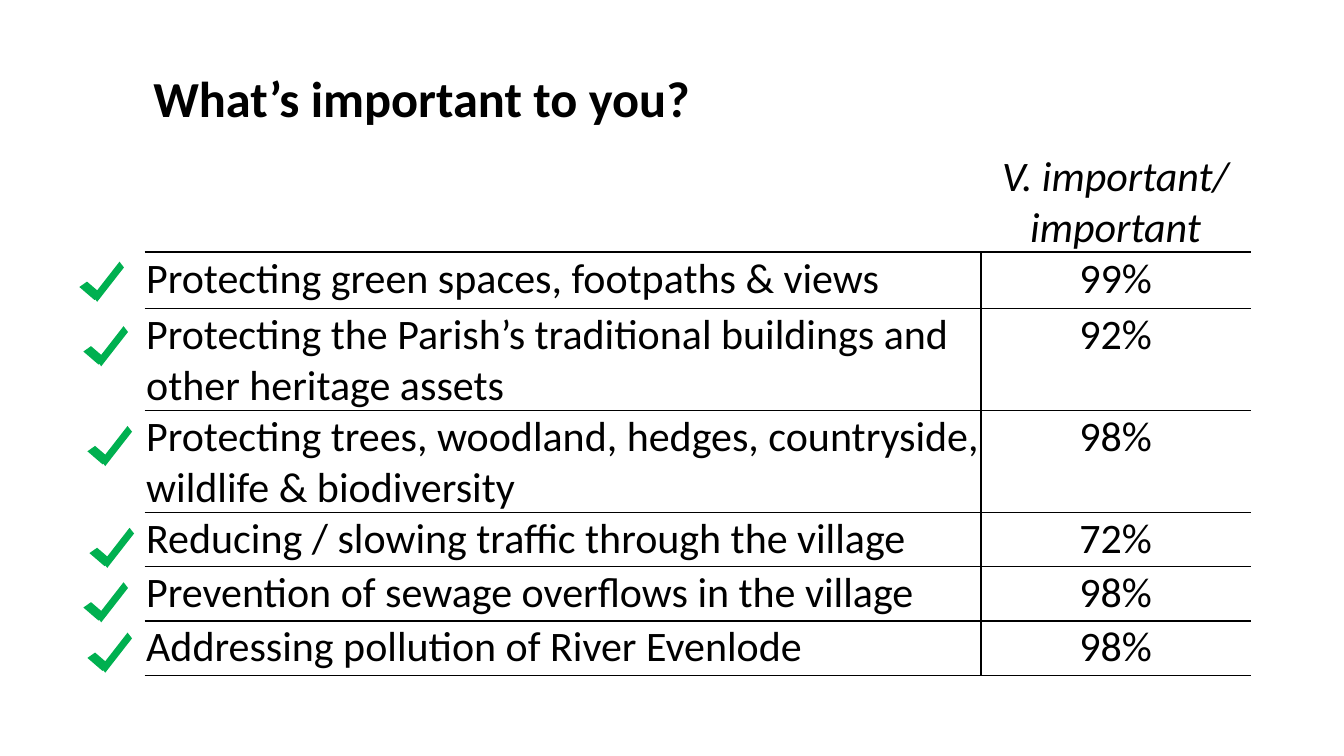
from dataclasses import dataclass

from lxml import etree
from pptx import Presentation
from pptx import util as u
from pptx.dml.color import RGBColor
from pptx.enum import shapes, text
from pptx.oxml import ns

PX = u.Inches(1) // 100


@dataclass(frozen=True)
class Theme:
    font: str = "Calibri"
    ink: str = "000000"
    tick: str = "00B050"
    title_size: int = 36
    body_size: int = 30
    rule_width: int = 1


THEME = Theme()
TITLE = "What’s important to you?"
HEADER = ("", "V. important/ important")
PRIORITIES = [
    ("Protecting green spaces, footpaths & views", "99%"),
    ("Protecting the Parish’s traditional buildings and other heritage assets", "92%"),
    ("Protecting trees, woodland, hedges, countryside, wildlife & biodiversity", "98%"),
    ("Reducing / slowing traffic through the village", "72%"),
    ("Prevention of sewage overflows in the village", "98%"),
    ("Addressing pollution of River Evenlode", "98%"),
]
COLUMN_WIDTHS = (829, 267)
ROW_HEIGHTS = (100, 56, 101, 101, 54, 54, 54)
TICK_PLACES = [(79, 276), (83, 340), (87, 439), (89, 540), (83, 594), (87, 644)]
# Each stroke: left and top within the tick, width, height, rotation
TICK_STROKES = [(0, 8, 22, 9, 40.7), (6, 0, 45, 7, 307.9)]


def px(*lengths):
    return [length * PX for length in lengths]


def set_attributes(target, values):
    for name, value in values.items():
        setattr(target, name, value)


def write(frame, words, size, align, **style):
    para = frame.paragraphs[0]
    para.alignment = align
    span = para.add_run()
    span.text = words
    set_attributes(span.font, {"name": THEME.font, "size": u.Pt(size), **style})
    span.font.color.rgb = RGBColor.from_string(THEME.ink)


def add_title(page, left, top, width, height):
    title = page.shapes.title
    places = px(left, top, width, height)
    set_attributes(title, dict(zip(("left", "top", "width", "height"), places)))
    set_attributes(title.text_frame, {
        "word_wrap": True,
        "auto_size": text.MSO_AUTO_SIZE.SHAPE_TO_FIT_TEXT,
        "vertical_anchor": text.MSO_ANCHOR.TOP,
    })
    write(title.text_frame, TITLE, THEME.title_size, text.PP_ALIGN.LEFT, bold=True)


def rule_cell(cell, sides):
    """Draw rules on the given sides, named in the order L, R, T, B."""
    properties = cell._tc.get_or_add_tcPr()
    for index, side in enumerate(sides):
        line = etree.Element(ns.qn(f"a:ln{side}"), w=str(u.Pt(THEME.rule_width)))
        fill = etree.SubElement(line, ns.qn("a:solidFill"))
        etree.SubElement(fill, ns.qn("a:srgbClr"), val=THEME.ink)
        properties.insert(index, line)


def add_priorities(page, left, top):
    rows = [HEADER, *PRIORITIES]
    size = px(left, top, sum(COLUMN_WIDTHS), sum(ROW_HEIGHTS))
    table = page.shapes.add_table(len(rows), len(COLUMN_WIDTHS), *size).table
    set_attributes(table, {"first_row": False, "horz_banding": False})
    for column, width in zip(table.columns, px(*COLUMN_WIDTHS)):
        column.width = width
    for row, height in zip(table.rows, px(*ROW_HEIGHTS)):
        row.height = height
    for r, words_in_row in enumerate(rows):
        for c, words in enumerate(words_in_row):
            cell = table.cell(r, c)
            cell.fill.background()
            set_attributes(cell, {
                "margin_left": PX, "margin_right": PX,
                "margin_top": PX, "margin_bottom": 0,
            })
            rule_cell(cell, "B" if r == 0 else ("RTB", "LTB")[c])
            if words:
                align = (text.PP_ALIGN.LEFT, text.PP_ALIGN.CENTER)[c]
                write(cell.text_frame, words, THEME.body_size, align, italic=r == 0)


def add_tick(page, left, top):
    tick = page.shapes.add_group_shape()
    for x, y, width, height, rotation in TICK_STROKES:
        stroke = tick.shapes.add_shape(
            shapes.MSO_SHAPE.PARALLELOGRAM, *px(left + x, top + y, width, height))
        stroke.rotation = rotation
        stroke.shadow.inherit = False
        stroke.fill.solid()
        stroke.fill.fore_color.rgb = RGBColor.from_string(THEME.tick)
        stroke.line.fill.background()


def main():
    deck = Presentation()
    deck.slide_width, deck.slide_height = px(1333, 750)
    page = deck.slides.add_slide(deck.slide_layouts.get_by_name("Title Only"))
    add_title(page, 142, 62, 729, 71)
    add_priorities(page, 144, 149)
    for left, top in TICK_PLACES:
        add_tick(page, left, top)
    deck.save("out.pptx")


if __name__ == "__main__":
    main()
